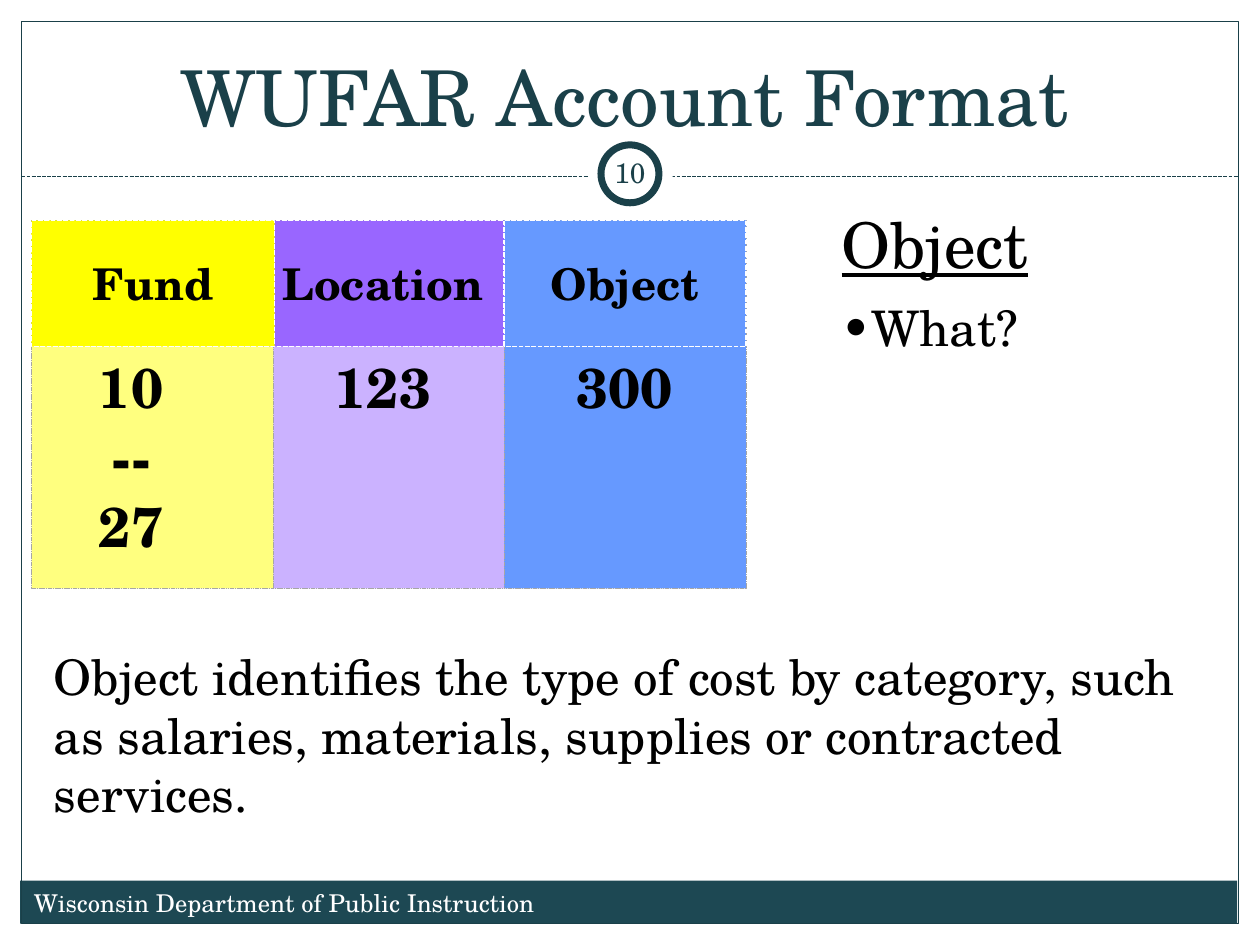
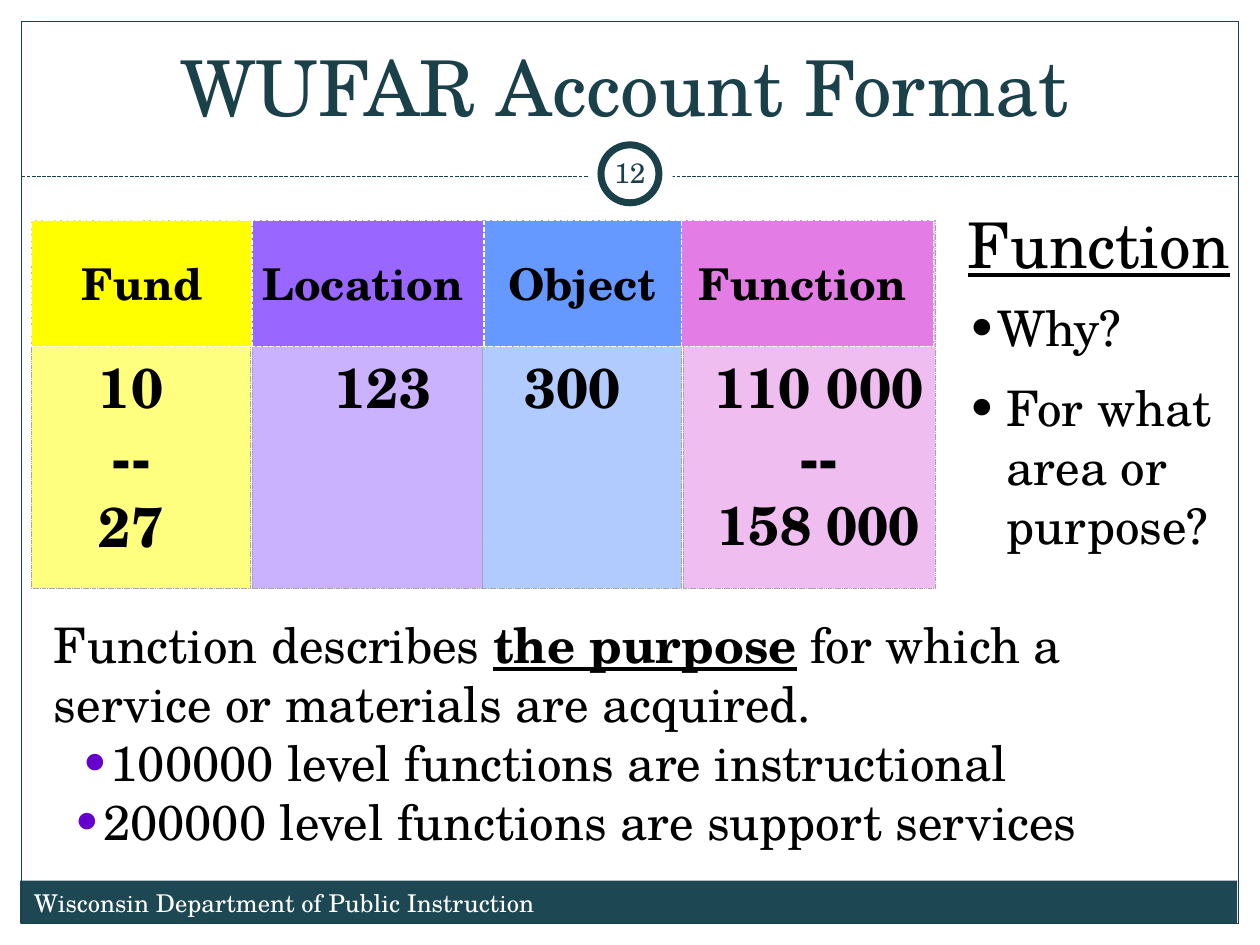
import lxml.etree
import pptx
import pptx.dml.color
import pptx.enum.dml
import pptx.enum.shapes
import pptx.enum.text
import pptx.oxml.ns
import pptx.util

Inches = pptx.util.Inches
Pt = pptx.util.Pt
SHAPE = pptx.enum.shapes.MSO_SHAPE
ALIGN = pptx.enum.text.PP_ALIGN
ANCHOR = pptx.enum.text.MSO_ANCHOR

FONT = "TeX Gyre Schola"
COLORS = {
    "ink": "000000", "white": "FFFFFF", "teal": "1A4049", "band": "1D4853",
    "grid": "A6A6A6", "bullet": "6600CC", "fund": "FFFF00",
    "location": "9966FF", "object": "6699FF", "function": "E37DE5",
}
TABLE_TOP, HEADER_H, COLUMN_H = 1.75, 1, 2.92


def rgb(name):
    return pptx.dml.color.RGBColor.from_string(COLORS[name])


def sub(parent, tag, **attrs):
    return lxml.etree.SubElement(parent, pptx.oxml.ns.qn(tag), attrs)


class Deck:
    """Holds the style and the slide being built."""

    def __init__(self):
        self.prs = pptx.Presentation()
        self.prs.slide_width, self.prs.slide_height = Inches(10), Inches(7.5)
        self.s = None

    # Elements
    def shape(self, kind, box, fill=None, line=None, width=0.75, dash=False, alpha=None):
        sp = self.s.shapes.add_shape(kind, *map(Inches, box))
        sp.shadow.inherit = False
        if fill:
            sp.fill.solid()
            sp.fill.fore_color.rgb = rgb(fill)
            if alpha:
                clr = sp.fill._xPr.find(".//" + pptx.oxml.ns.qn("a:srgbClr"))
                sub(clr, "a:alpha", val=str(alpha * 1000))
        else:
            sp.fill.background()
        if line:
            self.stroke(sp.line, line, width, dash)
        else:
            sp.line.fill.background()
        return sp

    def stroke(self, line, color, width, dash):
        line.color.rgb = rgb(color)
        line.width = Pt(width)
        if dash:
            line.dash_style = pptx.enum.dml.MSO_LINE.SQUARE_DOT

    def rule(self, x1, y1, x2, y2):
        cn = self.s.shapes.add_connector(
            pptx.enum.shapes.MSO_CONNECTOR.STRAIGHT, *map(Inches, (x1, y1, x2, y2)))
        self.stroke(cn.line, "teal", 0.75, True)
        sub(cn._element.spPr, "a:effectLst")

    def text(self, box, anchor=ANCHOR.TOP, inset=None):
        sp = self.s.shapes.add_textbox(*map(Inches, box))
        return self.frame(sp, anchor, inset)

    def placeholder(self, idx, box, anchor):
        sp = self.s.placeholders[idx]
        sp.left, sp.top, sp.width, sp.height = map(Inches, box)
        return self.frame(sp, anchor)

    def frame(self, sp, anchor, inset=None):
        tf = sp.text_frame
        tf.word_wrap = True
        tf.auto_size = pptx.enum.text.MSO_AUTO_SIZE.NONE
        tf.vertical_anchor = anchor
        if inset is not None:
            tf.margin_left = tf.margin_right = Inches(inset)
            tf.margin_top = tf.margin_bottom = Inches(inset)
        return tf

    def para(self, tf, runs, size, color="ink", bold=False, underline=False,
             align=ALIGN.LEFT, before=0, bullet=None, left=0, hang=0):
        """Runs are strings; a tuple holds a string to stress."""
        p = tf.paragraphs[0]
        if p.runs:
            p = tf.add_paragraph()
        p.alignment = align
        p.space_before = Pt(before)
        pPr = p._p.get_or_add_pPr()
        pPr.set("marL", str(Inches(left)))
        pPr.set("indent", str(Inches(-hang)))
        if bullet:
            sub(sub(pPr, "a:buClr"), "a:srgbClr", val=COLORS[bullet])
            sub(pPr, "a:buFont", typeface=FONT)
            sub(pPr, "a:buChar", char="•")
        else:
            sub(pPr, "a:buNone")
        for run in runs:
            stress = isinstance(run, tuple)
            r = p.add_run()
            r.text = run[0] if stress else run
            r.font.name, r.font.size = FONT, Pt(size)
            r.font.color.rgb = rgb(color)
            r.font.bold = bold or stress
            r.font.underline = underline or stress

    # Parts of every slide
    def slide(self, number, title_top):
        self.s = self.prs.slides.add_slide(self.prs.slide_layouts[1])
        self.shape(SHAPE.RECTANGLE, (0.16, 6.99, 9.66, 0.34), "band")
        self.shape(SHAPE.RECTANGLE, (0.17, 0.17, 9.66, 7.16), line="teal")
        self.rule(0.17, 1.4, 9.83, 1.4)
        self.shape(SHAPE.OVAL, (4.67, 1.05, 0.67, 0.67), "white")
        self.shape(SHAPE.OVAL, (4.77, 1.15, 0.46, 0.46), "white", "teal", 4)
        self.para(self.text((4.75, 1.13, 0.5, 0.48), ANCHOR.MIDDLE, 0.05),
                  [number], 16, "teal", align=ALIGN.CENTER)
        self.para(self.placeholder(0, (0.25, title_top, 9.42, 0.85), ANCHOR.BOTTOM),
                  ["WUFAR Account Format"], 44, "teal", align=ALIGN.CENTER)
        self.para(self.text((0.17, 7, 4.42, 0.5)),
                  ["Wisconsin Department of Public Instruction"], 14, "white")

    def columns(self, columns):
        """Each column: name, header, body and value spans, values, alpha."""
        for name, _, (x, w), _, _, alpha in columns:
            self.shape(SHAPE.RECTANGLE, (x, TABLE_TOP, w, COLUMN_H), name.lower(),
                       "grid", 0.25, True, alpha)
        for _, _, _, (x, w), values, _ in columns:
            tf = self.text((x, TABLE_TOP + HEADER_H, w, 0.64 if len(values) == 1 else 1.82))
            for value, size in values:
                self.para(tf, [value], size, bold=True, align=ALIGN.CENTER)
        # Left headers overlap their right neighbours
        for name, (x, w), *_ in reversed(columns):
            sp = self.shape(SHAPE.RECTANGLE, (x, TABLE_TOP, w, HEADER_H), name.lower(),
                            "white", 0.9, True)
            self.para(self.frame(sp, ANCHOR.MIDDLE), [name], 25, bold=True,
                      align=ALIGN.CENTER)

    def sidebar(self, box, heading, question):
        tf = self.placeholder(1, box, ANCHOR.TOP)
        self.para(tf, [heading], 36, underline=True)
        self.para(tf, [question], 28, before=9.6, bullet="ink", left=0.24, hang=0.24)
        return tf


def main():
    deck = Deck()
    fund_values = [("10", 32), ("--", 34), ("27", 32)]
    fund_span, location_span = (0.5, 1.08), (2.5, 1.08)

    # Object
    deck.slide("10", 0.33)
    deck.columns([
        ("Fund", (0.25, 1.93), (0.25, 1.92), fund_span, fund_values, 50),
        ("Location", (2.08, 1.92), (2.17, 1.83), location_span, [("123", 32)], 50),
        ("Object", (4, 1.92), (4, 1.92), (4.33, 1.25), [("300", 32)], None),
    ])
    deck.sidebar((6.58, 1.58, 3.17, 1.95), "Object", "What?")
    deck.para(deck.text((0.33, 5.08, 9.17, 1.6)),
              ["Object identifies the type of cost by category, such as salaries, "
               "materials, supplies or contracted services."], 28)

    # Function
    deck.slide("12", 0.25)
    deck.columns([
        ("Fund", (0.25, 1.75), (0.25, 1.74), fund_span, fund_values, 50),
        ("Location", (1.92, 1.92), (2, 1.83), location_span, [("123", 32)], 50),
        ("Object", (3.83, 1.58), (3.83, 1.58), (3.92, 1.25), [("300", 32)], 50),
        ("Function", (5.33, 2.08), (5.42, 2), (5.5, 2),
         [("110 000", 32), ("--", 34), ("158 000", 31)], 50),
    ])
    tf = deck.sidebar((7.58, 1.58, 2.33, 3.53), "Function", "Why?")
    deck.para(tf, ["For what area or purpose?"], 28, before=12, bullet="ink",
              left=0.31, hang=0.31)
    tf = deck.text((0.33, 4.83, 9.17, 2.1))
    deck.para(tf, ["Function describes ", ("the purpose",),
                   " for which a service or materials are acquired."], 28)
    for level, left in (("100000 level functions are instructional", 0.45),
                        ("200000 level functions are support services", 0.39)):
        deck.para(tf, [level], 28, bullet="bullet", left=left, hang=0.24)

    deck.prs.save("out.pptx")


if __name__ == "__main__":
    main()
